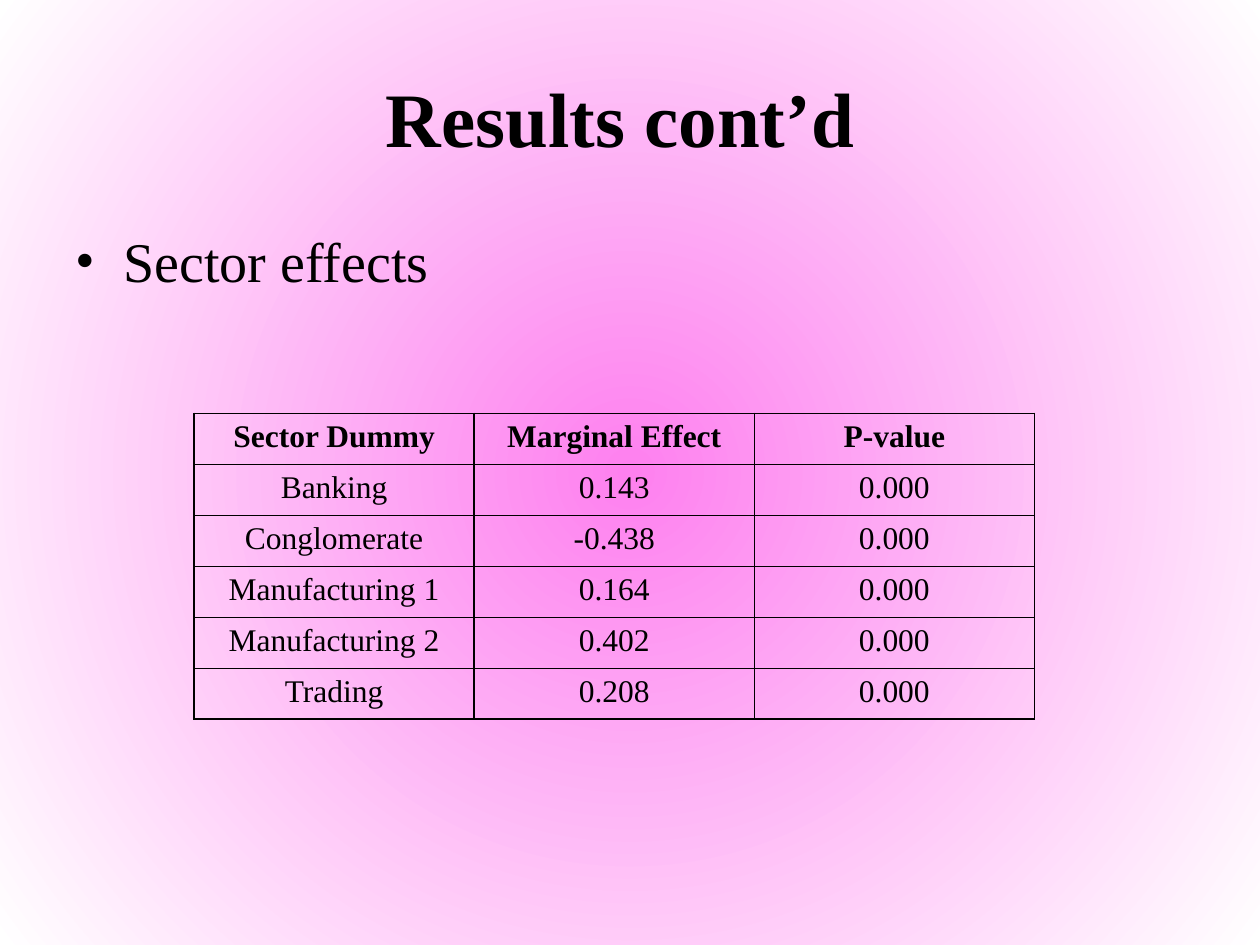
"""Build the sector effects results slide."""
from lxml.etree import SubElement as Sub
from pptx import Presentation
from pptx.dml.color import RGBColor
from pptx.enum.text import MSO_ANCHOR as Anchor, PP_ALIGN as Align
from pptx.oxml.ns import qn
from pptx.util import Inches, Pt

BLACK = RGBColor(0x00, 0x00, 0x00)
PINK = RGBColor(0xFE, 0x80, 0xEF)
WHITE = RGBColor(0xFF, 0xFF, 0xFF)
FONT = "Times New Roman"


def write(para, text, size, bold=False):
    run = para.add_run()
    run.text = text
    run.font.name = FONT
    run.font.size = Pt(size)
    run.font.bold = bold
    run.font.color.rgb = BLACK


def border(cell):
    props = cell._tc.get_or_add_tcPr()
    for side in ("lnL", "lnR", "lnT", "lnB"):
        line = Sub(props, qn(f"a:{side}"), w=str(Pt(1)))
        fill = Sub(line, qn("a:solidFill"))
        Sub(fill, qn("a:srgbClr"), val=str(BLACK))


deck = Presentation()
deck.slide_width = Inches(10)
deck.slide_height = Inches(7.5)
slide = deck.slides.add_slide(deck.slide_layouts[6])

back = slide.background.fill
back.gradient()
for stop, color in zip(back.gradient_stops, (PINK, WHITE)):
    stop.color.rgb = color
    stop.position = 0 if color == PINK else 1
grad = slide.element.find(".//" + qn("a:gradFill"))
grad.remove(grad.find(qn("a:lin")))
glow = Sub(grad, qn("a:path"), path="circle")
Sub(glow, qn("a:fillToRect"), l="50000", t="50000", r="50000", b="50000")

title = slide.shapes.add_textbox(Inches(0.5), Inches(0.3), Inches(9), Inches(1.25))
frame = title.text_frame
frame.word_wrap = True
frame.vertical_anchor = Anchor.MIDDLE
para = frame.paragraphs[0]
para.alignment = Align.CENTER
write(para, "Results cont’d ", 44, True)

body = slide.shapes.add_textbox(Inches(0.5), Inches(1.75), Inches(9), Inches(4.95))
frame = body.text_frame
frame.word_wrap = True
para = frame.paragraphs[0]
para.space_before = Pt(6.4)
props = para._p.get_or_add_pPr()
props.set("marL", str(Inches(0.38)))
props.set("indent", str(Inches(-0.38)))
Sub(props, qn("a:buFont"), typeface=FONT)
Sub(props, qn("a:buChar"), char="•")
write(para, "Sector effects", 32)

rows = [
    ("Sector Dummy", "Marginal Effect", "P-value"),
    ("Banking", "0.143", "0.000"),
    ("Conglomerate", "-0.438", "0.000"),
    ("Manufacturing 1", "0.164", "0.000"),
    ("Manufacturing 2", "0.402", "0.000"),
    ("Trading", "0.208", "0.000"),
]
table = slide.shapes.add_table(
    len(rows), 3, Inches(1.54), Inches(3.28), Inches(6.67), Inches(2.43)
).table
table.horz_banding = False
for r, row in enumerate(rows):
    for c, text in enumerate(row):
        cell = table.cell(r, c)
        border(cell)
        cell.fill.background()
        para = cell.text_frame.paragraphs[0]
        para.alignment = Align.CENTER
        write(para, text, 18, r == 0)

deck.save("out.pptx")
